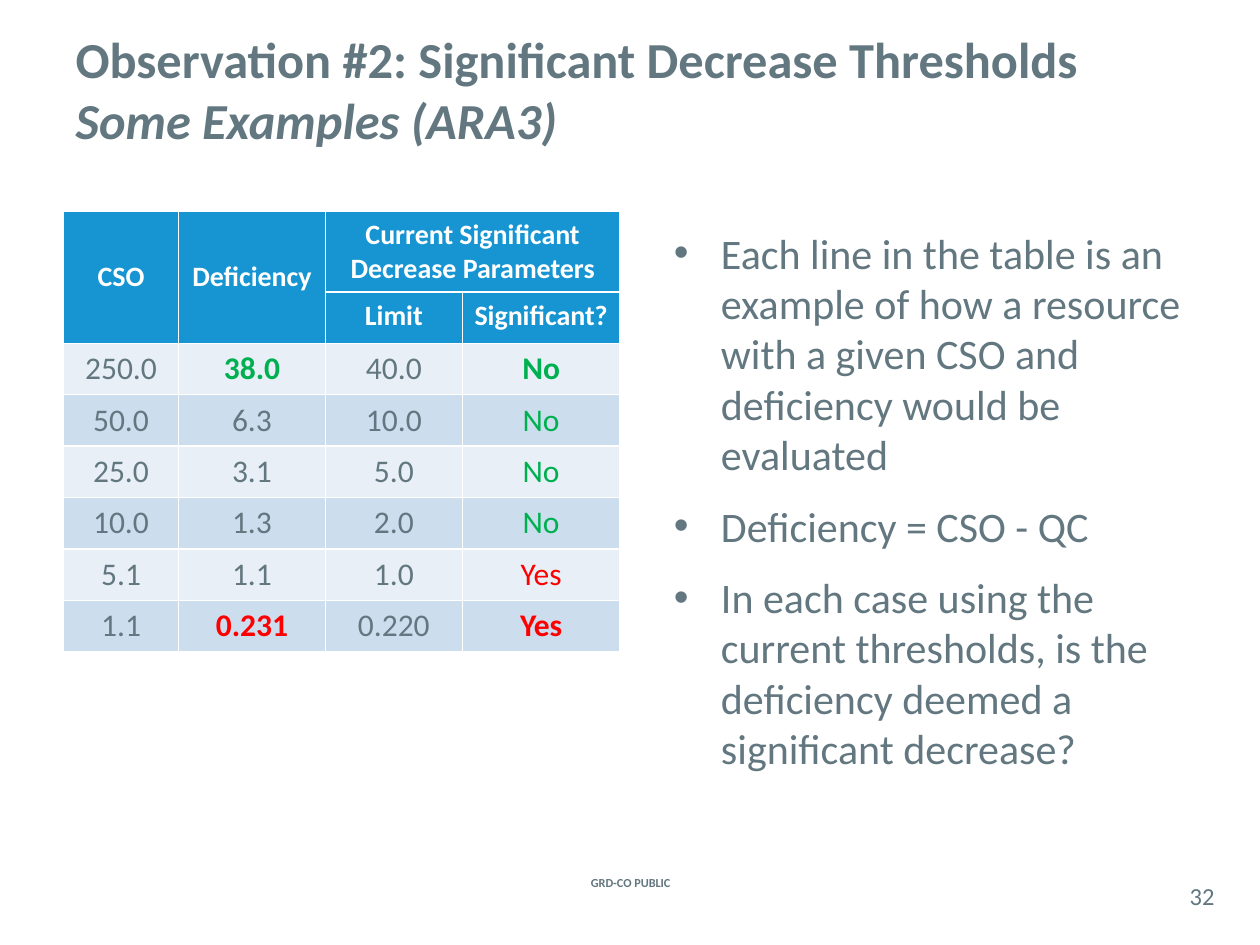
from lxml.etree import SubElement
from pptx import Presentation
from pptx.dml.color import RGBColor
from pptx.enum.text import MSO_ANCHOR as Anchor, MSO_AUTO_SIZE as AutoSize, PP_ALIGN as Align
from pptx.oxml.ns import qn
from pptx.util import Cm, Pt

FONT = "Calibri"
COLORS = {
    "text": "62777F",
    "white": "FFFFFF",
    "header": "1795D2",
    "light_row": "E8EFF7",
    "dark_row": "CCDDEE",
    "green": "00B050",
    "red": "FF0000",
}
COLUMN_WIDTHS = (2.32, 2.96, 2.76, 3.18)
HEADER_HEIGHT, ROW_HEIGHT = 1.61, 1.03
HEADERS = (
    ("CSO", "Deficiency", "Current Significant Decrease Parameters", ""),
    ("", "", "Limit", "Significant?"),
)
EXAMPLES = (
    ("250.0", "38.0", "40.0", "No"),
    ("50.0", "6.3", "10.0", "No"),
    ("25.0", "3.1", "5.0", "No"),
    ("10.0", "1.3", "2.0", "No"),
    ("5.1", "1.1", "1.0", "Yes"),
    ("1.1", "0.231", "0.220", "Yes"),
)
HIGHLIGHTED = {"38.0": "green", "0.231": "red"}
ANSWERS = {"No": "green", "Yes": "red"}
BULLETS = (
    "Each line in the table is an example of how a resource with a given CSO "
    "and deficiency would be evaluated",
    "Deficiency = CSO - QC",
    "In each case using the current thresholds, is the deficiency deemed a "
    "significant decrease?",
)


def add_run(paragraph, text, size, color="text", bold=False, italic=False):
    run = paragraph.add_run()
    run.text = text
    font = run.font
    font.name, font.size, font.bold, font.italic = FONT, Pt(size), bold, italic
    font.color.rgb = RGBColor.from_string(COLORS[color])


def place(shape, left, top, width, height):
    shape.left, shape.top = Cm(left), Cm(top)
    shape.width, shape.height = Cm(width), Cm(height)


def fill_title(title):
    place(title, 1.27, 0.2, 22.86, 3.18)
    frame = title.text_frame
    frame.auto_size = AutoSize.NONE
    frame.vertical_anchor = Anchor.MIDDLE
    paragraph = frame.paragraphs[0]
    paragraph.alignment = Align.LEFT
    add_run(paragraph, "Observation #2: Significant Decrease Thresholds", 28.8, bold=True)
    paragraph.add_line_break()
    add_run(paragraph, "Some Examples (ARA3)", 28.8, bold=True, italic=True)


def fill_bullets(body):
    place(body, 13.33, 4.45, 10.8, 12.7)
    frame = body.text_frame
    frame.auto_size = AutoSize.NONE
    for index, text in enumerate(BULLETS):
        paragraph = frame.add_paragraph() if index else frame.paragraphs[0]
        paragraph.space_before = Pt(12 if index else 0)
        properties = paragraph._p.get_or_add_pPr()
        properties.set("marL", str(Cm(0.95)))
        properties.set("indent", str(Cm(-0.95)))
        SubElement(properties, qn("a:buChar"), char="•")
        add_run(paragraph, text, 24)


def add_borders(cell):
    properties = cell._tc.get_or_add_tcPr()
    for side in ("lnL", "lnR", "lnT", "lnB"):
        line = SubElement(properties, qn(f"a:{side}"), w=str(Pt(1)))
        solid = SubElement(line, qn("a:solidFill"))
        SubElement(solid, qn("a:srgbClr"), val=COLORS["white"])


def style_cell(cell, fill):
    add_borders(cell)
    cell.fill.solid()
    cell.fill.fore_color.rgb = RGBColor.from_string(COLORS[fill])
    cell.margin_left = cell.margin_right = Cm(0.18)
    cell.margin_top = cell.margin_bottom = Cm(0.13)


def write_cell(cell, text, size, color, bold):
    paragraph = cell.text_frame.paragraphs[0]
    paragraph.alignment = Align.CENTER
    add_run(paragraph, text, size, color, bold)


def add_example_table(slide):
    rows = HEADERS + EXAMPLES
    height = HEADER_HEIGHT + ROW_HEIGHT * (len(rows) - 1)
    table = slide.shapes.add_table(
        len(rows), len(COLUMN_WIDTHS),
        Cm(1.28), Cm(4.25), Cm(sum(COLUMN_WIDTHS)), Cm(height),
    ).table
    for column, width in zip(table.columns, COLUMN_WIDTHS):
        column.width = Cm(width)
    for index, row in enumerate(table.rows):
        row.height = Cm(ROW_HEIGHT if index else HEADER_HEIGHT)

    for row_index, texts in enumerate(rows):
        is_header = row_index < len(HEADERS)
        highlighted = any(text in HIGHLIGHTED for text in texts)
        band = "dark_row" if row_index % 2 else "light_row"
        for column_index, text in enumerate(texts):
            cell = table.cell(row_index, column_index)
            style_cell(cell, "header" if is_header else band)
            if is_header and text:
                write_cell(cell, text, 16, "white", True)
            elif text:
                color = HIGHLIGHTED.get(text) or ANSWERS.get(text, "text")
                write_cell(cell, text, 18, color, highlighted and color != "text")

    for column_index in range(3):
        table.cell(0, column_index).vertical_anchor = Anchor.MIDDLE
    table.cell(0, 0).merge(table.cell(1, 0))
    table.cell(0, 1).merge(table.cell(1, 1))
    table.cell(0, 2).merge(table.cell(0, 3))


def add_label(slide, text, box, size, bold=False):
    frame = slide.shapes.add_textbox(*map(Cm, box)).text_frame
    frame.word_wrap = True
    frame.vertical_anchor = Anchor.MIDDLE
    frame.margin_left = frame.margin_right = 0
    frame.margin_top = frame.margin_bottom = 0
    paragraph = frame.paragraphs[0]
    paragraph.alignment = Align.CENTER
    add_run(paragraph, text, size, bold=bold)


def main():
    presentation = Presentation()
    presentation.slide_width, presentation.slide_height = Cm(25.4), Cm(19.05)
    slide = presentation.slides.add_slide(presentation.slide_layouts[1])
    fill_title(slide.shapes.title)
    fill_bullets(slide.placeholders[1])
    add_example_table(slide)
    add_label(slide, "GRD-CO PUBLIC", (10.85, 17.58, 3.73, 0.43), 7, bold=True)
    add_label(slide, "32", (23.7, 17.68, 1.07, 0.74), 14)
    presentation.save("out.pptx")


if __name__ == "__main__":
    main()
